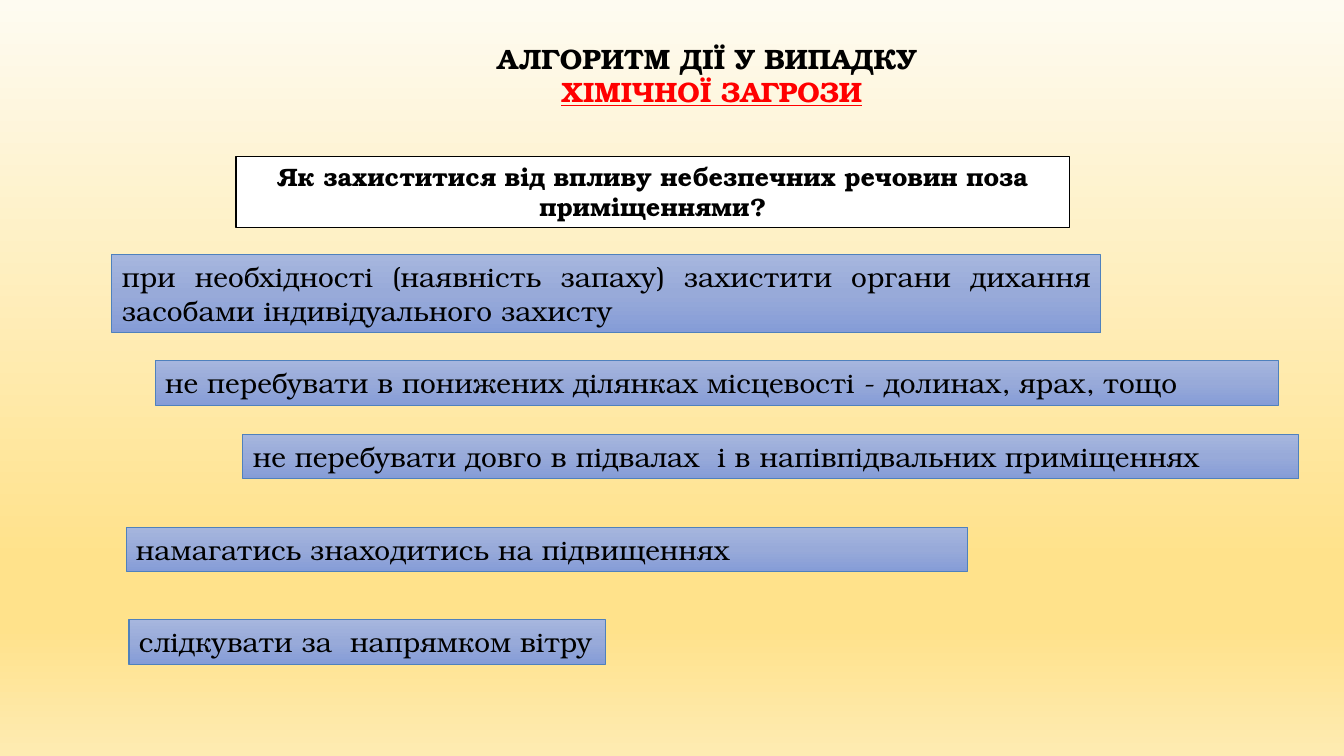
from dataclasses import dataclass

from lxml.etree import SubElement
from pptx import Presentation
from pptx.dml.color import RGBColor as RGB
from pptx.enum.shapes import MSO_SHAPE as Shape
from pptx.enum.text import MSO_ANCHOR as Anchor, MSO_AUTO_SIZE as Fit, PP_ALIGN as Align
from pptx.oxml.ns import qn
from pptx.util import Inches, Pt

# Content: boxes are left, top, width, height in inches
TITLE = ["АЛГОРИТМ ДІЇ У ВИПАДКУ ", "ХІМІЧНОЇ ЗАГРОЗИ"]
TITLE_BOX = (3.44, 0.36, 7.24, 0.77)
QUESTION = "Як захиститися від впливу небезпечних речовин поза приміщеннями?"
QUESTION_BOX = (2.34, 1.55, 8.27, 0.71)
ADVICE = [
    ("при необхідності (наявність запаху) захистити органи дихання "
     "засобами індивідуального захисту", (1.11, 2.53, 9.81, 0.77)),
    ("не перебувати в понижених ділянках місцевості - долинах, ярах, тощо",
     (1.54, 3.58, 11.14, 0.44)),
    ("не перебувати довго в підвалах  і в напівпідвальних приміщеннях",
     (2.41, 4.31, 10.47, 0.44)),
    ("намагатись знаходитись на підвищеннях", (1.25, 5.23, 8.35, 0.44)),
    ("слідкувати за  напрямком вітру", (1.28, 6.15, 4.73, 0.44)),
]


@dataclass(frozen=True)
class Theme:
    font: str = "TeX Gyre Bonum"
    large: int = 20
    small: int = 18
    ink: str = "000000"
    alert: str = "FF0000"
    paper: str = "FFFFFF"
    edge: str = "4F81BD"
    bar: tuple = ((0, "A6B6DE"), (50, "98AAD9"), (100, "859CD7"))
    back: tuple = ((0, "FEFBF1"), (74, "FFE28B"), (83, "FFE28B"), (100, "FEEBB2"))


theme = Theme()


def blend(fill, root, stops):
    """Fill from top to bottom with any number of colour stops."""
    fill.gradient()
    fill.gradient_angle = 270
    group = next(root.iter(qn("a:gsLst")))
    for old in list(group):
        group.remove(old)
    for place, color in stops:
        stop = SubElement(group, qn("a:gs"), pos=str(place * 1000))
        SubElement(stop, qn("a:srgbClr"), val=color)


def write(frame, lines, size, align, bold=False):
    frame.word_wrap = True
    frame.auto_size = Fit.NONE
    frame.vertical_anchor = Anchor.TOP
    frame.text = "\n".join(lines)
    for para in frame.paragraphs:
        para.alignment = align
        font = para.font
        font.name, font.size, font.bold = theme.font, Pt(size), bold
        font.color.rgb = RGB.from_string(theme.ink)


def panel(slide, box, edge, width):
    shape = slide.shapes.add_shape(Shape.RECTANGLE, *map(Inches, box))
    shape.shadow.inherit = False
    shape.line.color.rgb = RGB.from_string(edge)
    shape.line.width = Pt(width)
    return shape


def main():
    deck = Presentation()
    deck.slide_width, deck.slide_height = Inches(13.33), Inches(7.5)
    slide = deck.slides.add_slide(deck.slide_layouts[5])
    blend(slide.background.fill, slide.element, theme.back)

    # Title
    title = slide.shapes.title
    title.left, title.top, title.width, title.height = map(Inches, TITLE_BOX)
    write(title.text_frame, TITLE, theme.large, Align.CENTER, bold=True)
    threat = title.text_frame.paragraphs[1].font
    threat.color.rgb = RGB.from_string(theme.alert)
    threat.underline = True

    # Advice bars
    for text, box in ADVICE:
        bar = panel(slide, box, theme.edge, 0.75)
        blend(bar.fill, bar.element, theme.bar)
        write(bar.text_frame, [text], theme.large, Align.JUSTIFY)

    # Question
    ask = panel(slide, QUESTION_BOX, theme.ink, 1)
    ask.fill.solid()
    ask.fill.fore_color.rgb = RGB.from_string(theme.paper)
    write(ask.text_frame, [QUESTION], theme.small, Align.CENTER, bold=True)

    deck.save("out.pptx")


if __name__ == "__main__":
    main()
